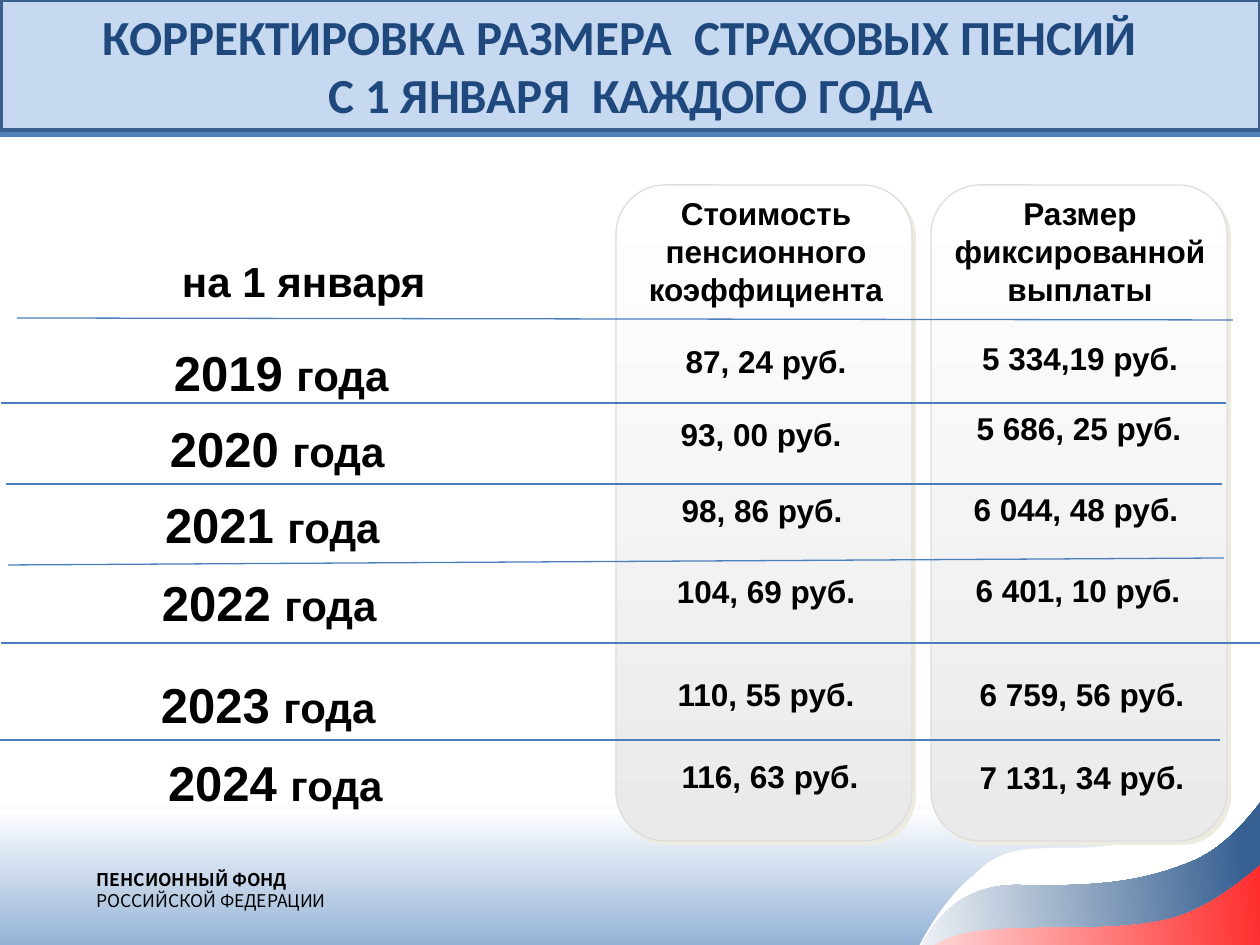
import math

import pptx
import pptx.util
from lxml import etree
from pptx.dml.color import RGBColor
from pptx.enum.shapes import MSO_CONNECTOR, MSO_SHAPE
from pptx.enum.text import MSO_ANCHOR, MSO_AUTO_SIZE, PP_ALIGN
from pptx.oxml.ns import qn

SCALE = 914400 / 126  # EMU per px

WHITE = RGBColor(0xFF, 0xFF, 0xFF)
BLACK = RGBColor(0x00, 0x00, 0x00)
NAVY = RGBColor(0x1F, 0x49, 0x7D)
TITLE_FILL = RGBColor(0xC6, 0xD9, 0xF1)
TITLE_LINE = RGBColor(0x3A, 0x5F, 0x8C)
PALE_BLUE = RGBColor(0xDB, 0xE5, 0xF1)
FOOT_BLUE = RGBColor(0x95, 0xB3, 0xD7)
RIBBON_BLUE = RGBColor(0x37, 0x60, 0x92)
RIBBON_RED = RGBColor(0xFF, 0x00, 0x00)
BAND_LINE = RGBColor(0x4F, 0x81, 0xBD)
ROW_LINE = RGBColor(0x4B, 0x7E, 0xBC)
CARD_FILL = RGBColor(0xEA, 0xEA, 0xEA)
CARD_LINE = RGBColor(0xDD, 0xDD, 0xDD)

# title line, right margin
TITLE = [("КОРРЕКТИРОВКА РАЗМЕРА  СТРАХОВЫХ ПЕНСИЙ", 22), ("С 1 ЯНВАРЯ  КАЖДОГО ГОДА", 0)]
FOOTER = ["ПЕНСИОННЫЙ ФОНД", "РОССИЙСКОЙ ФЕДЕРАЦИИ"]
DATE_HEADING = "на 1 января"
CARDS = [  # card left, heading left, heading
    (931, 932, "Размер фиксированной выплаты"),
    (616, 618, "Стоимость пенсионного коэффициента"),
]
CARD_WIDTH = 296
YEAR_RIGHT = 616
# year: box left, text left, top; then each value: text, left, top
ROWS = [
    (("2019", -1, 174, 336), ("87, 24 руб.", 618, 336), ("5 334,19 руб.", 932, 333)),
    (("2020", 35, 170, 412), ("93, 00 руб.", 613, 409), ("5 686, 25 руб.", 931, 403)),
    (("2021", 4, 165, 488), ("98, 86 руб.", 614, 485), ("6 044, 48 руб.", 928, 484)),
    (("2022", 1, 162, 566), ("104, 69 руб.", 618, 566), ("6 401, 10 руб.", 930, 565)),
    (("2023", 0, 161, 668), ("110, 55 руб.", 618, 669), ("6 759, 56 руб.", 934, 669)),
    (("2024", 6, 168, 746), ("116, 63 руб.", 622, 751), ("7 131, 34 руб.", 934, 752)),
]
RULES = [
    (17, 318, 1233, 320), (1, 403, 1226, 403), (6, 484, 1222, 484),
    (1224, 558, 8, 565), (1260, 643, 1, 643), (1220, 740, 0, 740),
]
# ribbon: box, end colour, end position, start point, cubic curves
RIBBON_TILT = 4.5
RIBBONS = [
    ((900, 689, 427, 272), WHITE, 1, (912, 977), [
        (902, 966, 944, 897, 973, 876), (1000, 847, 1026, 849, 1056, 848),
        (1086, 848, 1128, 848, 1154, 832), (1179, 825, 1226, 789, 1247, 774),
        (1268, 757, 1271, 755, 1281, 738), (1293, 722, 1308, 659, 1313, 677),
        (1318, 694, 1331, 810, 1312, 843), (1294, 876, 1255, 866, 1203, 876),
        (1152, 886, 1081, 919, 1032, 936), (985, 953, 922, 987, 912, 977)]),
    ((900, 736, 417, 224), RIBBON_BLUE, 0.8, (910, 974), [
        (915, 963, 934, 882, 1021, 885), (1108, 887, 1147, 879, 1188, 863),
        (1230, 847, 1255, 809, 1274, 785), (1293, 762, 1300, 706, 1305, 723),
        (1310, 741, 1323, 857, 1304, 890), (1287, 922, 1247, 912, 1194, 922),
        (1143, 932, 1040, 941, 992, 950), (944, 959, 905, 984, 910, 974)]),
    ((862, 810, 518, 203), RIBBON_RED, 0.92, (873, 1027), [
        (906, 1004, 895, 963, 945, 940), (994, 917, 1116, 939, 1183, 915),
        (1249, 891, 1312, 810, 1343, 796), (1375, 781, 1373, 800, 1372, 829),
        (1371, 858, 1395, 939, 1334, 969), (1274, 999, 1089, 1002, 1012, 1012),
        (935, 1022, 852, 1043, 873, 1027)]),
]


def px(*lengths):
    return [pptx.util.Emu(round(length * SCALE)) for length in lengths]


def paint(shape, end, stop=1, angle=270, line=None):
    """Fill from white to the end colour; outline only if a colour is given."""
    shape.shadow.inherit = False
    if end == WHITE:
        shape.fill.solid()
        shape.fill.fore_color.rgb = WHITE
    else:
        shape.fill.gradient()
        shape.fill.gradient_angle = angle
        for mark, color, position in zip(shape.fill.gradient_stops, (WHITE, end), (0, stop)):
            mark.color.rgb = color
            mark.position = position
    if line is None:
        shape.line.fill.background()
    else:
        shape.line.color.rgb = line
        shape.line.width = pptx.util.Pt(0.75)


def add_shadow(shape, color, alpha, blur, distance, angle):
    effects = shape._element.spPr.find(qn("a:effectLst"))
    shadow = etree.SubElement(
        effects, qn("a:outerShdw"), blurRad=str(round(blur * 12700)),
        dist=str(round(distance * 12700)), dir=str(angle * 60000), algn="t", rotWithShape="0")
    tone = etree.SubElement(shadow, qn("a:srgbClr"), val=color)
    etree.SubElement(tone, qn("a:alpha"), val=str(alpha * 1000))


def add_line(ends, color, width):
    line = page.shapes.add_connector(MSO_CONNECTOR.STRAIGHT, *px(*ends))
    line.line.color.rgb = color
    line.line.width = pptx.util.Pt(width)
    etree.SubElement(line._element.spPr, qn("a:effectLst"))


def style(span, size, bold=True, name="Arial", color=BLACK):
    span.font.size = pptx.util.Pt(size)
    span.font.bold = bold
    span.font.name = name
    span.font.color.rgb = color


def add_text(area, spans, align=PP_ALIGN.CENTER, indent=None):
    box = page.shapes.add_textbox(*px(*area))
    frame = box.text_frame
    frame.word_wrap = True
    frame.auto_size = MSO_AUTO_SIZE.SHAPE_TO_FIT_TEXT
    if indent is not None:
        frame.margin_left = px(indent)[0]
    para = frame.paragraphs[0]
    para.alignment = align
    for text, size in spans:
        span = para.add_run()
        span.text = text
        style(span, size)


def add_ribbon(area, color, stop, start, curves):
    """Turn the curves upright inside the box, then tilt the finished shape."""
    left, top, width, height = area
    cos, sin = math.cos(math.radians(RIBBON_TILT)), math.sin(math.radians(RIBBON_TILT))

    def local(x, y):
        dx, dy = x - left - width / 2, y - top - height / 2
        return px(width / 2 + dx * cos - dy * sin, height / 2 + dx * sin + dy * cos)

    builder = page.shapes.build_freeform(*local(*start))
    builder.add_line_segments([local(*curve[4:]) for curve in curves])
    ribbon = builder.convert_to_shape()
    ribbon.left, ribbon.top, ribbon.width, ribbon.height = px(*area)
    outline = next(ribbon._element.iter(qn("a:path")))
    for child in list(outline):
        outline.remove(child)
    outline.set("w", str(ribbon.width))
    outline.set("h", str(ribbon.height))
    for tag, knots in [("a:moveTo", start)] + [("a:cubicBezTo", curve) for curve in curves]:
        command = etree.SubElement(outline, qn(tag))
        for x, y in zip(knots[::2], knots[1::2]):
            across, down = local(x, y)
            etree.SubElement(command, qn("a:pt"), x=str(int(across)), y=str(int(down)))
    etree.SubElement(outline, qn("a:close"))
    paint(ribbon, color, stop, 0)
    ribbon.rotation = 360 - RIBBON_TILT


deck = pptx.Presentation()
deck.slide_width, deck.slide_height = px(1260, 945)
page = deck.slides.add_slide(deck.slide_layouts[5])

# Bottom band and ribbons
band = page.shapes.add_shape(MSO_SHAPE.RECTANGLE, *px(0, 809, 1260, 136))
paint(band, FOOT_BLUE)
add_shadow(band, "808080", 35, 3.1, 1.8, 90)
for ribbon_data in RIBBONS:
    add_ribbon(*ribbon_data)

# Footer
footer = page.shapes.add_textbox(*px(97, 869, 238, 43)).text_frame
footer.margin_left = footer.margin_right = footer.margin_top = footer.margin_bottom = 0
footer.word_wrap = True
footer.text = "\n".join(FOOTER)
for para, bold in zip(footer.paragraphs, (True, False)):
    style(para.runs[0], 10, bold, "Noto Sans CJK KR")

# Header band
header = page.shapes.add_shape(MSO_SHAPE.RECTANGLE, *px(0, 1, 1260, 134))
paint(header, PALE_BLUE)
add_line((0, 134, 1260, 134), BAND_LINE, 3)

# Column cards and headings
for left, heading_left, heading in CARDS:
    card = page.shapes.add_shape(MSO_SHAPE.ROUNDED_RECTANGLE, *px(left, 185, CARD_WIDTH, 656))
    paint(card, CARD_FILL, line=CARD_LINE)
    add_shadow(card, "EEECE1", 100, 0, 2.8, 45)
    add_text((heading_left, 188, CARD_WIDTH, 127), [(heading, 18)])
add_text((29, 249, 554, 63), [(DATE_HEADING, 24)], PP_ALIGN.LEFT, 153)

# Rows and rules
for (year, left, text_left, top), *values in ROWS:
    add_text((left, top, YEAR_RIGHT - left, 72), [(year + " ", 28), ("года", 24)],
             PP_ALIGN.LEFT, text_left - left)
    for value, value_left, value_top in values:
        add_text((value_left, value_top, CARD_WIDTH, 50), [(value, 18)])
for rule in RULES:
    add_line(rule, ROW_LINE, 0.75)

# Title, in front of the header band
title = page.shapes.title
title.left, title.top, title.width, title.height = px(1, 0, 1259, 130)
title.fill.solid()
title.fill.fore_color.rgb = TITLE_FILL
title.line.color.rgb = TITLE_LINE
title.line.width = pptx.util.Pt(2)
title.text_frame.text = "\n".join(text for text, margin in TITLE)
title.text_frame.auto_size = MSO_AUTO_SIZE.NONE
title.text_frame.vertical_anchor = MSO_ANCHOR.MIDDLE
for para, (text, margin) in zip(title.text_frame.paragraphs, TITLE):
    para.alignment = PP_ALIGN.CENTER
    para._p.get_or_add_pPr().set("marR", str(int(px(margin)[0])))
    style(para.runs[0], 28, True, "Calibri", NAVY)
page.shapes._spTree.append(title._element)

deck.save("out.pptx")
